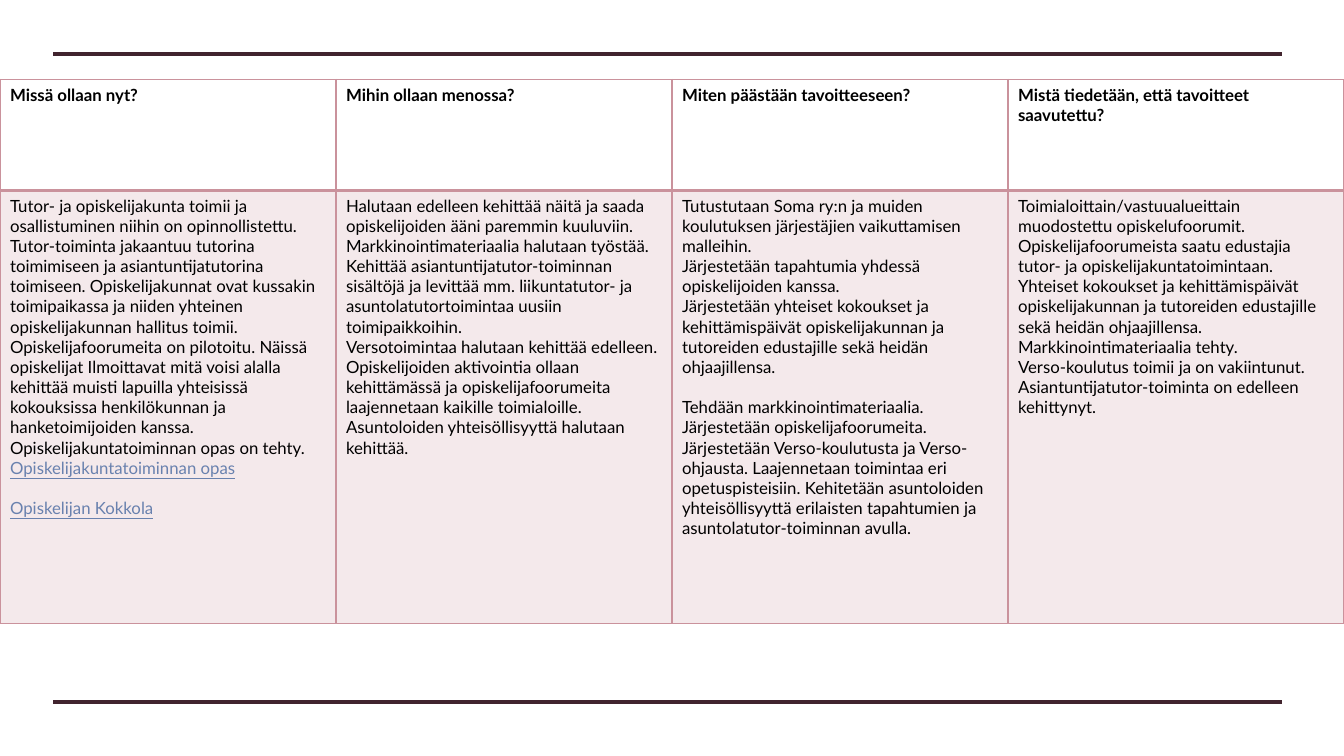
"""Build the slide with the four-column student activity plan."""
from lxml.etree import SubElement
from pptx import Presentation
from pptx.dml.color import RGBColor
from pptx.enum.shapes import MSO_CONNECTOR as Connector
from pptx.oxml.ns import qn
from pptx.util import Cm, Pt

LINKS = ("Opiskelijakuntatoiminnan opas", "Opiskelijan Kokkola")
PLAN = [
    ("Missä ollaan nyt?", [
        ["Tutor- ja opiskelijakunta toimii ja osallistuminen niihin on opinnollistettu.",
         "Tutor-toiminta jakaantuu tutorina toimimiseen ja asiantuntijatutorina toimiseen. "
         "Opiskelijakunnat ovat kussakin toimipaikassa ja niiden yhteinen opiskelijakunnan "
         "hallitus toimii.",
         "Opiskelijafoorumeita on pilotoitu. Näissä opiskelijat Ilmoittavat mitä voisi alalla "
         "kehittää muisti lapuilla yhteisissä kokouksissa henkilökunnan ja hanketoimijoiden "
         "kanssa.",
         "Opiskelijakuntatoiminnan opas on tehty.",
         LINKS[0]],
        [LINKS[1]],
    ]),
    ("Mihin ollaan menossa?", [
        ["Halutaan edelleen kehittää näitä ja saada opiskelijoiden ääni paremmin kuuluviin.",
         "Markkinointimateriaalia halutaan työstää. Kehittää asiantuntijatutor-toiminnan "
         "sisältöjä ja levittää mm. liikuntatutor- ja asuntolatutortoimintaa uusiin "
         "toimipaikkoihin.",
         "Versotoimintaa halutaan kehittää edelleen.",
         "Opiskelijoiden aktivointia ollaan kehittämässä ja opiskelijafoorumeita laajennetaan "
         "kaikille toimialoille.",
         "Asuntoloiden yhteisöllisyyttä halutaan kehittää."],
    ]),
    ("Miten päästään tavoitteeseen?", [
        ["Tutustutaan Soma ry:n ja muiden koulutuksen järjestäjien vaikuttamisen malleihin.",
         "Järjestetään tapahtumia yhdessä opiskelijoiden kanssa.",
         "Järjestetään yhteiset kokoukset ja kehittämispäivät opiskelijakunnan ja tutoreiden "
         "edustajille sekä heidän ohjaajillensa."],
        ["Tehdään markkinointimateriaalia.",
         "Järjestetään opiskelijafoorumeita.",
         "Järjestetään Verso-koulutusta ja Verso-ohjausta. Laajennetaan toimintaa eri "
         "opetuspisteisiin. Kehitetään asuntoloiden yhteisöllisyyttä erilaisten tapahtumien "
         "ja asuntolatutor-toiminnan avulla."],
    ]),
    ("Mistä tiedetään, että tavoitteet saavutettu?", [
        ["Toimialoittain/vastuualueittain muodostettu opiskelufoorumit.",
         "Opiskelijafoorumeista saatu edustajia tutor- ja opiskelijakuntatoimintaan.",
         "Yhteiset kokoukset ja kehittämispäivät opiskelijakunnan ja tutoreiden edustajille "
         "sekä heidän ohjaajillensa.",
         "Markkinointimateriaalia tehty.",
         "Verso-koulutus toimii ja on vakiintunut.",
         "Asiantuntijatutor-toiminta on edelleen kehittynyt."],
    ]),
]
PLUM, ROSE, BLACK, LINK_BLUE = "41242E", "CA929C", "000000", "6981AE"
WIDTH, HEIGHT = Cm(33.87), Cm(19.05)
RULE_LEFT, RULE_RIGHT, RULE_TOPS = Cm(1.34), Cm(32.31), (Cm(1.36), Cm(17.69))
TABLE_TOP, HEADER_HEIGHT, BODY_HEIGHT = Cm(2), Cm(2.8), Cm(10.92)
LINE_GAP = 14.4


def color(hex_code):
    return RGBColor.from_string(hex_code)


def write(paragraph, text, *, bold=False, ink=BLACK, underline=False, before=0):
    paragraph.space_before = Pt(before)
    run = paragraph.add_run()
    run.text = text
    font = run.font
    font.name, font.size, font.bold, font.underline = "Lato", Pt(12), bold, underline
    font.color.rgb = color(ink)


def add_rule(slide, top):
    rule = slide.shapes.add_connector(Connector.STRAIGHT, RULE_LEFT, top, RULE_RIGHT, top)
    rule.line.color.rgb = color(PLUM)
    rule.line.width = Pt(2.25)
    SubElement(rule._element.spPr, qn("a:effectLst"))


def add_borders(cell, bottom=1):
    properties = cell._tc.get_or_add_tcPr()
    for side, width in (("L", 1), ("R", 1), ("T", 1), ("B", bottom)):
        border = SubElement(properties, qn(f"a:ln{side}"), w=str(Pt(width)))
        SubElement(SubElement(border, qn("a:solidFill")), qn("a:srgbClr"), val=ROSE)


def fill_header(cell, question):
    add_borders(cell, bottom=2)
    cell.fill.background()
    write(cell.text_frame.paragraphs[0], question, bold=True)


def fill_body(cell, groups):
    add_borders(cell)
    cell.fill.solid()
    cell.fill.fore_color.rgb = color(ROSE)
    tint = cell._tc.tcPr.find(qn("a:solidFill")).find(qn("a:srgbClr"))
    SubElement(tint, qn("a:alpha"), val="20000")
    frame = cell.text_frame
    for group_index, group in enumerate(groups):
        for index, sentence in enumerate(group):
            is_first = group_index == index == 0
            is_link = sentence in LINKS
            write(frame.paragraphs[0] if is_first else frame.add_paragraph(), sentence,
                  ink=LINK_BLUE if is_link else BLACK, underline=is_link,
                  before=LINE_GAP if group_index and index == 0 else 0)


def main():
    deck = Presentation()
    deck.slide_width, deck.slide_height = WIDTH, HEIGHT
    slide = deck.slides.add_slide(deck.slide_layouts[6])
    for top in RULE_TOPS:
        add_rule(slide, top)
    table = slide.shapes.add_table(2, len(PLAN), 0, TABLE_TOP, WIDTH,
                                   HEADER_HEIGHT + BODY_HEIGHT).table
    table.horz_banding = False
    table.rows[0].height, table.rows[1].height = HEADER_HEIGHT, BODY_HEIGHT
    for column, (question, groups) in enumerate(PLAN):
        fill_header(table.cell(0, column), question)
        fill_body(table.cell(1, column), groups)
    deck.save("out.pptx")


if __name__ == "__main__":
    main()
